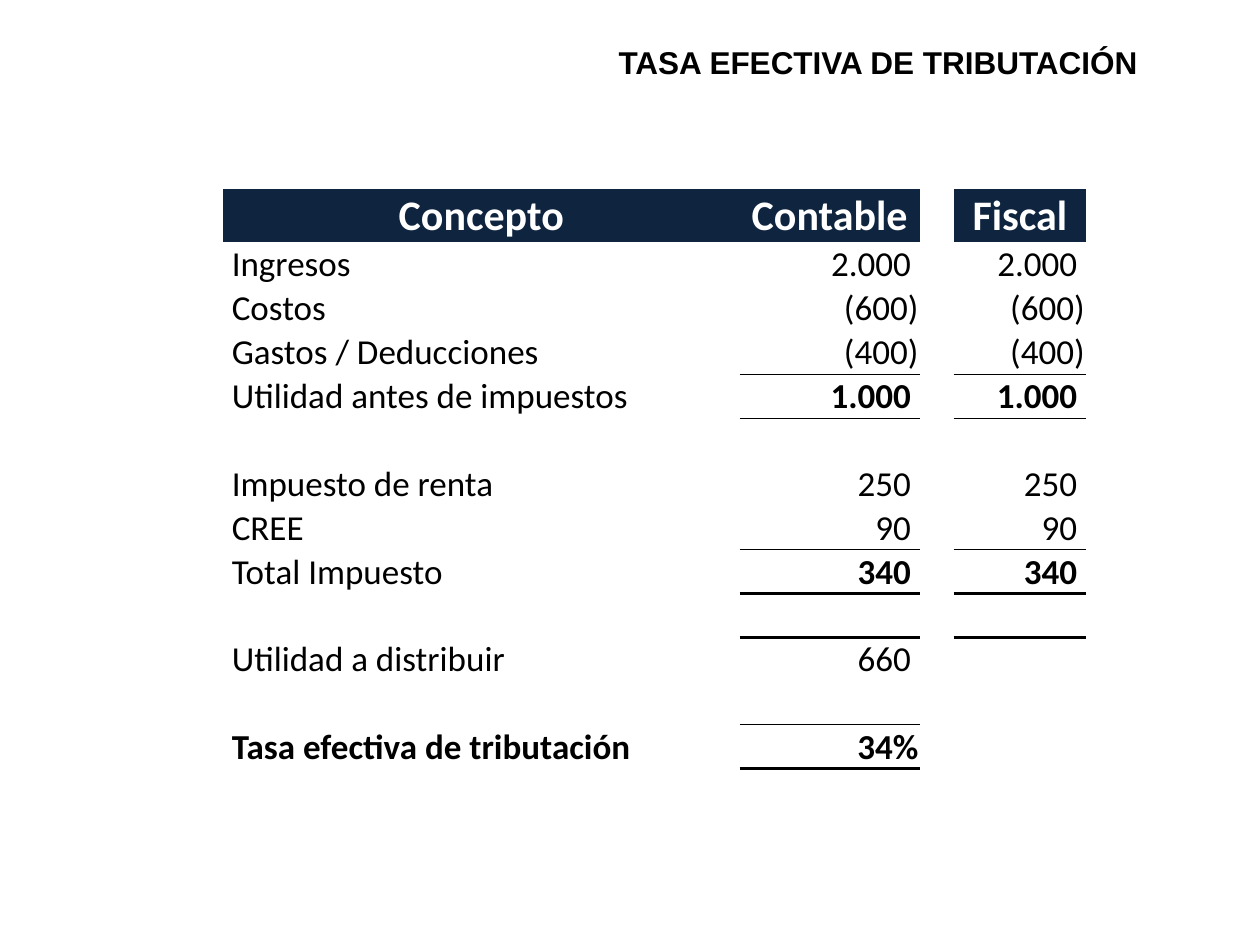
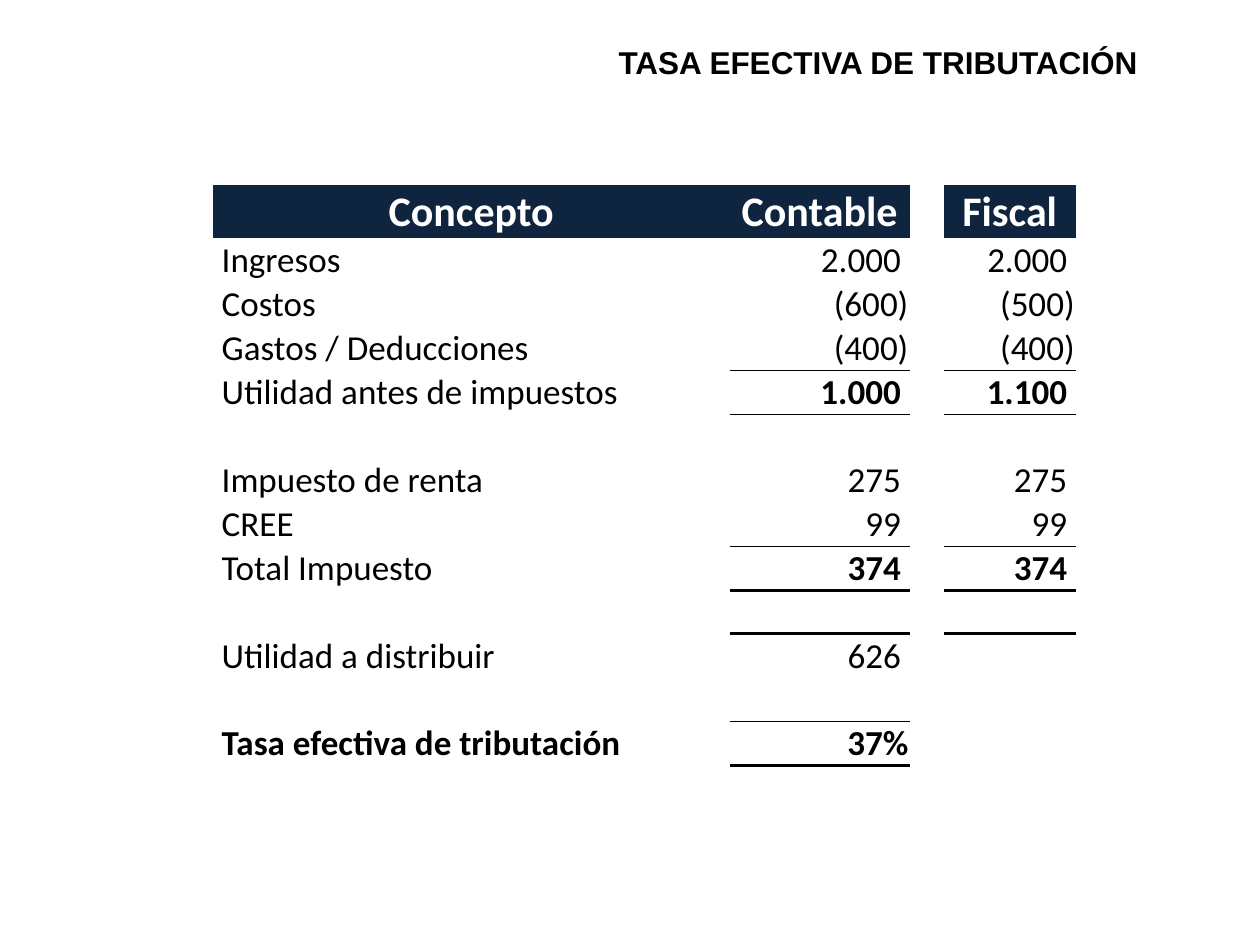
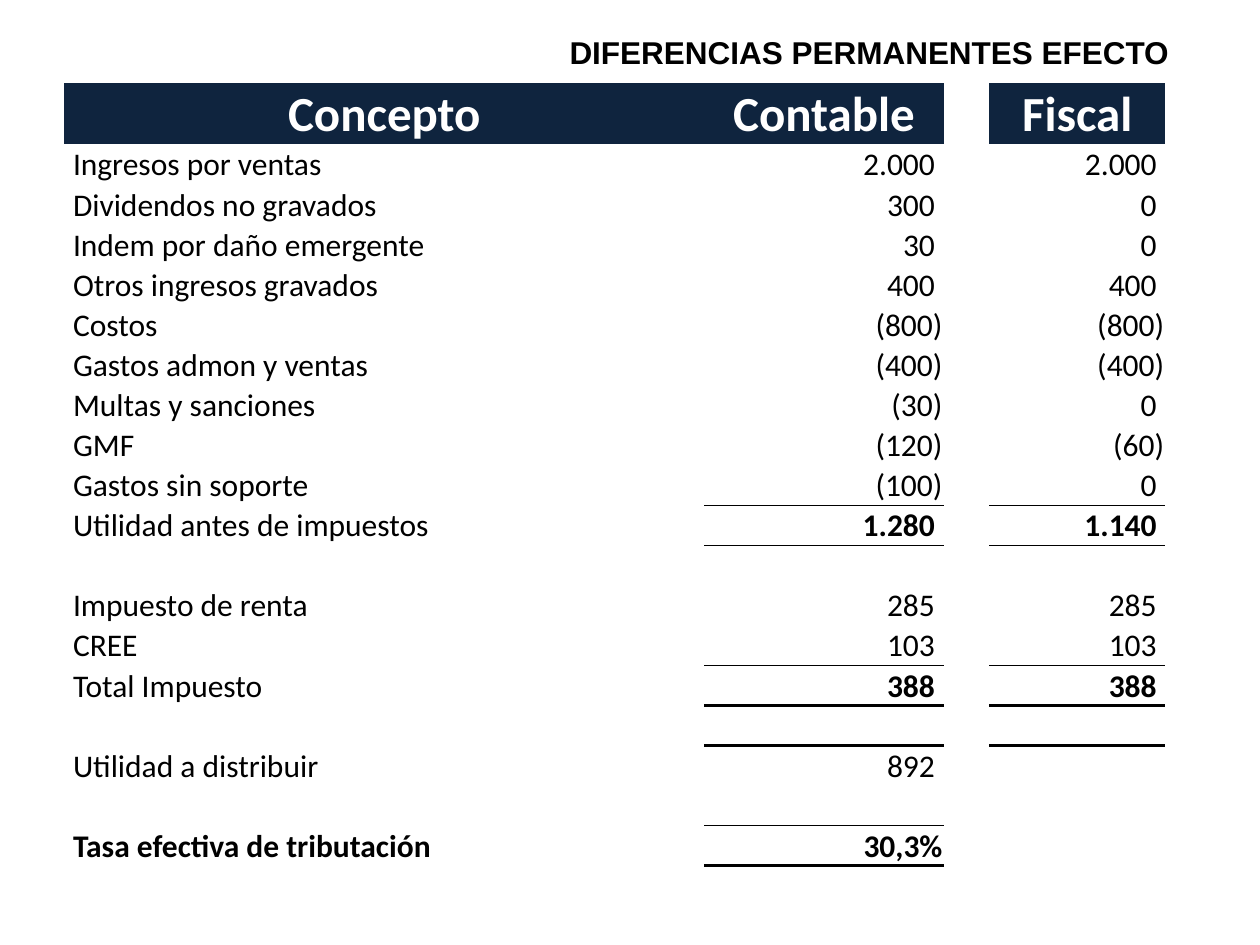
from dataclasses import dataclass

from lxml.etree import SubElement
from pptx import Presentation
from pptx.dml.color import RGBColor
from pptx.enum.text import MSO_ANCHOR, MSO_AUTO_SIZE, PP_ALIGN
from pptx.oxml.ns import qn
from pptx.util import Inches, Pt

NAVY = RGBColor(0x0F, 0x24, 0x3E)
WHITE = RGBColor(0xFF, 0xFF, 0xFF)
BLACK = RGBColor(0x00, 0x00, 0x00)

TITLE_FONT = {"name": "Arial", "size": Pt(18), "bold": True}
PLAIN_STYLE = "{2D5ABB26-0587-4C30-8999-92F81FD0307C}"
HEADINGS = ("Concepto", "Contable", "", "Fiscal")
EDGE, DIGIT_GAP = 0.01, 0.07
THIN, THICK = 0.5, 2

# Rules above and below the amounts of each kind of row, in points
RULES = {
    "entry": (0, 0),
    "subtotal": (THIN, 0),
    "total": (THIN, THICK),
    "rate": (THIN, THICK),
}


@dataclass
class Row:
    label: str = ""
    accounting: str = ""
    fiscal: str = ""
    kind: str = "entry"

    def texts(self):
        return self.label, self.accounting, "", self.fiscal


@dataclass
class TableFormat:
    columns: tuple
    height: float
    header_height: float
    header_size: int
    body_size: int


STANDARD = TableFormat((4.1, 1.43, 0.27, 1.05), 4.54, 0.41, 24, 20)
LARGE = TableFormat((5.08, 1.9, 0.36, 1.4), 6.21, 0.48, 28, 18)


def statement(entries, profit, income_tax, cree, total, payout, rate):
    """Income entries followed by the tax lines every statement ends with."""
    return [
        *(Row(*entry) for entry in entries),
        Row("Utilidad antes de impuestos", *profit, "subtotal"),
        Row(),
        Row("Impuesto de renta", income_tax, income_tax),
        Row("CREE", cree, cree),
        Row("Total Impuesto", total, total, "total"),
        Row(),
        Row("Utilidad a distribuir", payout),
        Row(),
        Row("Tasa efectiva de tributación", rate, kind="rate"),
    ]


def set_font(font, values, color):
    for name, value in values.items():
        setattr(font, name, value)
    font.color.rgb = color


def add_title(page, text, box):
    title = page.shapes.title
    title.left, title.top, title.width, title.height = map(Inches, box)
    frame = title.text_frame
    frame.auto_size = MSO_AUTO_SIZE.NONE
    frame.word_wrap = False
    frame.vertical_anchor = MSO_ANCHOR.TOP
    para = frame.paragraphs[0]
    para.alignment = PP_ALIGN.RIGHT
    span = para.add_run()
    span.text = text
    set_font(span.font, TITLE_FONT, BLACK)


def add_rule(cell, side, width):
    properties = cell._tc.get_or_add_tcPr()
    line = SubElement(properties, qn(f"a:{side}"), w=str(Pt(width)))
    fill = SubElement(line, qn("a:solidFill"))
    SubElement(fill, qn("a:srgbClr"), val=str(BLACK))


def write_cell(cell, text, alignment, size, bold, color, left=EDGE, right=EDGE):
    margins = {"margin_left": left, "margin_right": right,
               "margin_top": EDGE, "margin_bottom": 0}
    for name, value in margins.items():
        setattr(cell, name, Inches(value))
    cell.vertical_anchor = MSO_ANCHOR.BOTTOM
    if text:
        para = cell.text_frame.paragraphs[0]
        para.alignment = alignment
        span = para.add_run()
        span.text = text
        set_font(span.font, {"name": "Calibri", "size": Pt(size), "bold": bold}, color)


def write_header(table, size):
    for column, heading in enumerate(HEADINGS):
        cell = table.cell(0, column)
        write_cell(cell, heading, PP_ALIGN.CENTER, size, True, WHITE)
        if heading:
            cell.fill.solid()
            cell.fill.fore_color.rgb = NAVY
        else:
            cell.fill.background()


def column_rules(rows, column):
    """Rules above and below each row, shared with its neighbours."""
    pairs = [RULES[row.kind] if row.texts()[column] else (0, 0) for row in rows]
    above = [(0, 0)] + pairs[:-1]
    below = pairs[1:] + [(0, 0)]
    return [(own[0] or before[1], own[1] or after[0])
            for before, own, after in zip(above, pairs, below)]


def write_body(table, rows, size):
    for column in range(len(HEADINGS)):
        rules = column_rules(rows, column) if column else [(0, 0)] * len(rows)
        for number, (row, widths) in enumerate(zip(rows, rules), 1):
            cell = table.cell(number, column)
            text = row.texts()[column]
            if column == 0:
                write_cell(cell, text, PP_ALIGN.LEFT, size, row.kind == "rate",
                           BLACK, left=DIGIT_GAP)
            else:
                # Brackets and percent signs hang to the right of the digits
                right = EDGE if text.endswith((")", "%")) else DIGIT_GAP
                write_cell(cell, text, PP_ALIGN.RIGHT, size, row.kind != "entry",
                           BLACK, right=right)
            for side, width in zip(("lnT", "lnB"), widths):
                if width:
                    add_rule(cell, side, width)
            cell.fill.background()


def add_statement_table(page, rows, left, top, layout):
    frame = page.shapes.add_table(
        len(rows) + 1, len(HEADINGS), Inches(left), Inches(top),
        Inches(sum(layout.columns)), Inches(layout.height))
    table = frame.table
    table.first_row = table.horz_banding = False
    next(frame._element.iter(qn("a:tableStyleId"))).text = PLAIN_STYLE
    for column, width in zip(table.columns, layout.columns):
        column.width = Inches(width)
    row_height = (layout.height - layout.header_height) / len(rows)
    for number, row in enumerate(table.rows):
        row.height = Inches(row_height if number else layout.header_height)
    write_header(table, layout.header_size)
    write_body(table, rows, layout.body_size)


def add_page(deck, title, title_box, rows, left, top, layout):
    page = deck.slides.add_slide(deck.slide_layouts[5])
    add_title(page, title, title_box)
    add_statement_table(page, rows, left, top, layout)


def main():
    deck = Presentation()
    deck.slide_width, deck.slide_height = Inches(10), Inches(7.5)
    rate_title = "TASA EFECTIVA DE TRIBUTACIÓN"
    rate_box = (4.13, 0.29, 5, 0.4)

    # Equal accounting and fiscal bases
    equal_bases = statement(
        [("Ingresos", "2.000", "2.000"),
         ("Costos", "(600)", "(600)"),
         ("Gastos / Deducciones", "(400)", "(400)")],
        ("1.000", "1.000"), "250", "90", "340", "660", "34%")
    add_page(deck, rate_title, rate_box, equal_bases, 1.77, 1.5, STANDARD)

    # Lower fiscal costs
    lower_costs = statement(
        [("Ingresos", "2.000", "2.000"),
         ("Costos", "(600)", "(500)"),
         ("Gastos / Deducciones", "(400)", "(400)")],
        ("1.000", "1.100"), "275", "99", "374", "626", "37%")
    add_page(deck, rate_title, rate_box, lower_costs, 1.69, 1.47, STANDARD)

    # Permanent differences
    differences = statement(
        [("Ingresos por ventas", "2.000", "2.000"),
         ("Dividendos no gravados", "300", "0"),
         ("Indem por daño emergente", "30", "0"),
         ("Otros ingresos gravados", "400", "400"),
         ("Costos", "(800)", "(800)"),
         ("Gastos admon y ventas", "(400)", "(400)"),
         ("Multas y sanciones", "(30)", "0"),
         ("GMF", "(120)", "(60)"),
         ("Gastos sin soporte", "(100)", "0")],
        ("1.280", "1.140"), "285", "103", "388", "892", "30,3%")
    add_page(deck, "DIFERENCIAS PERMANENTES EFECTO", (4.37, 0.21, 5.01, 0.4),
             differences, 0.51, 0.66, LARGE)

    deck.save("out.pptx")


if __name__ == "__main__":
    main()
